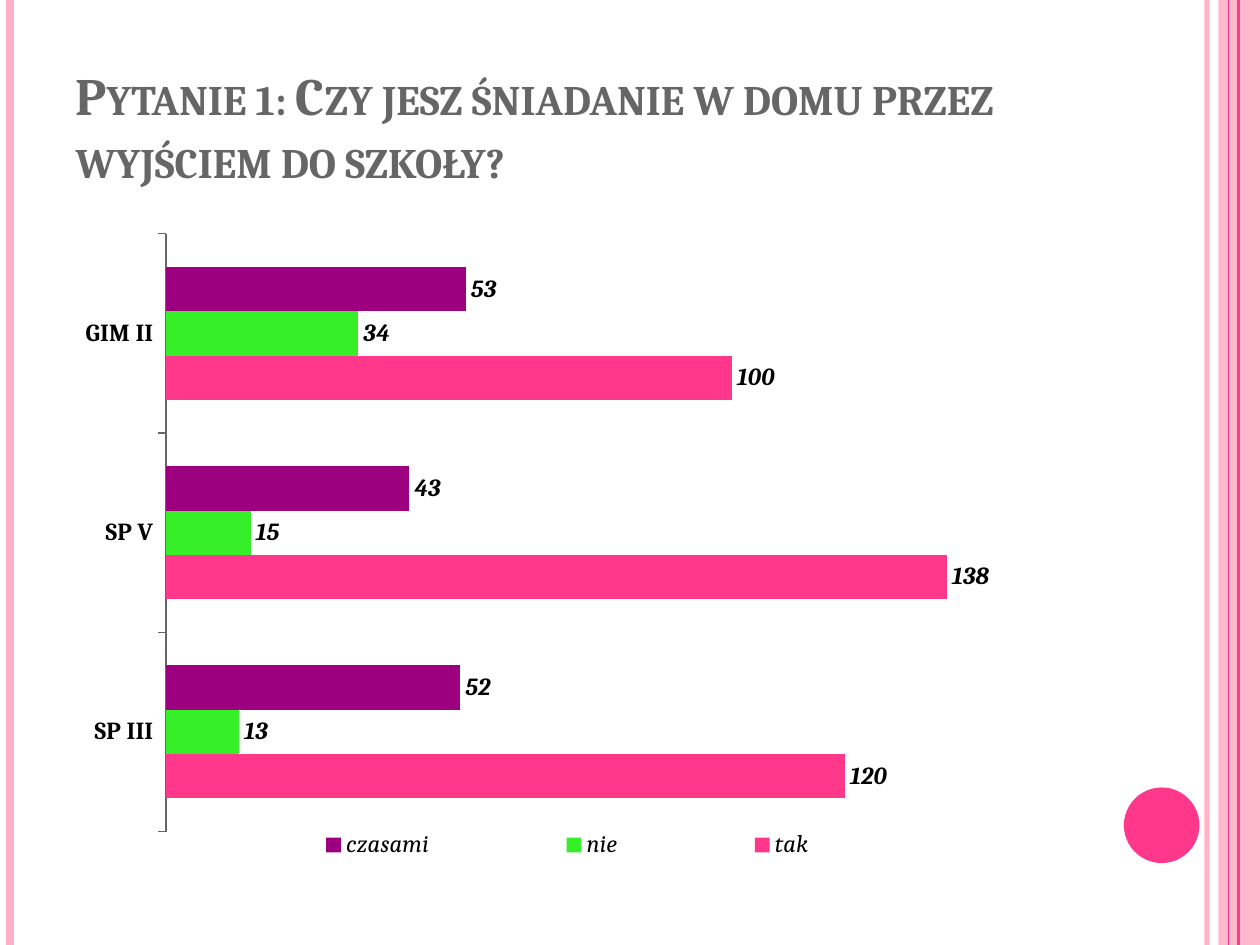
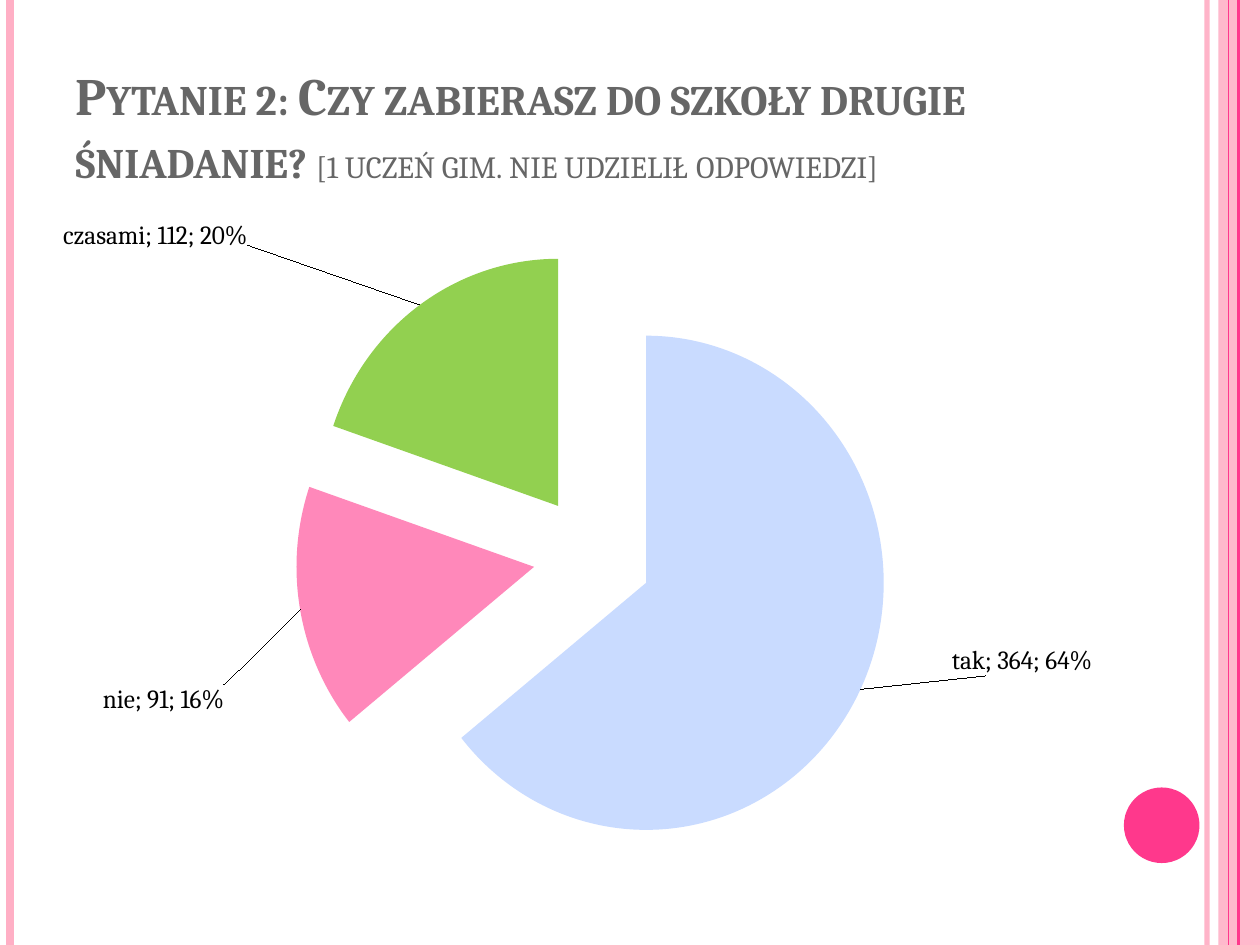
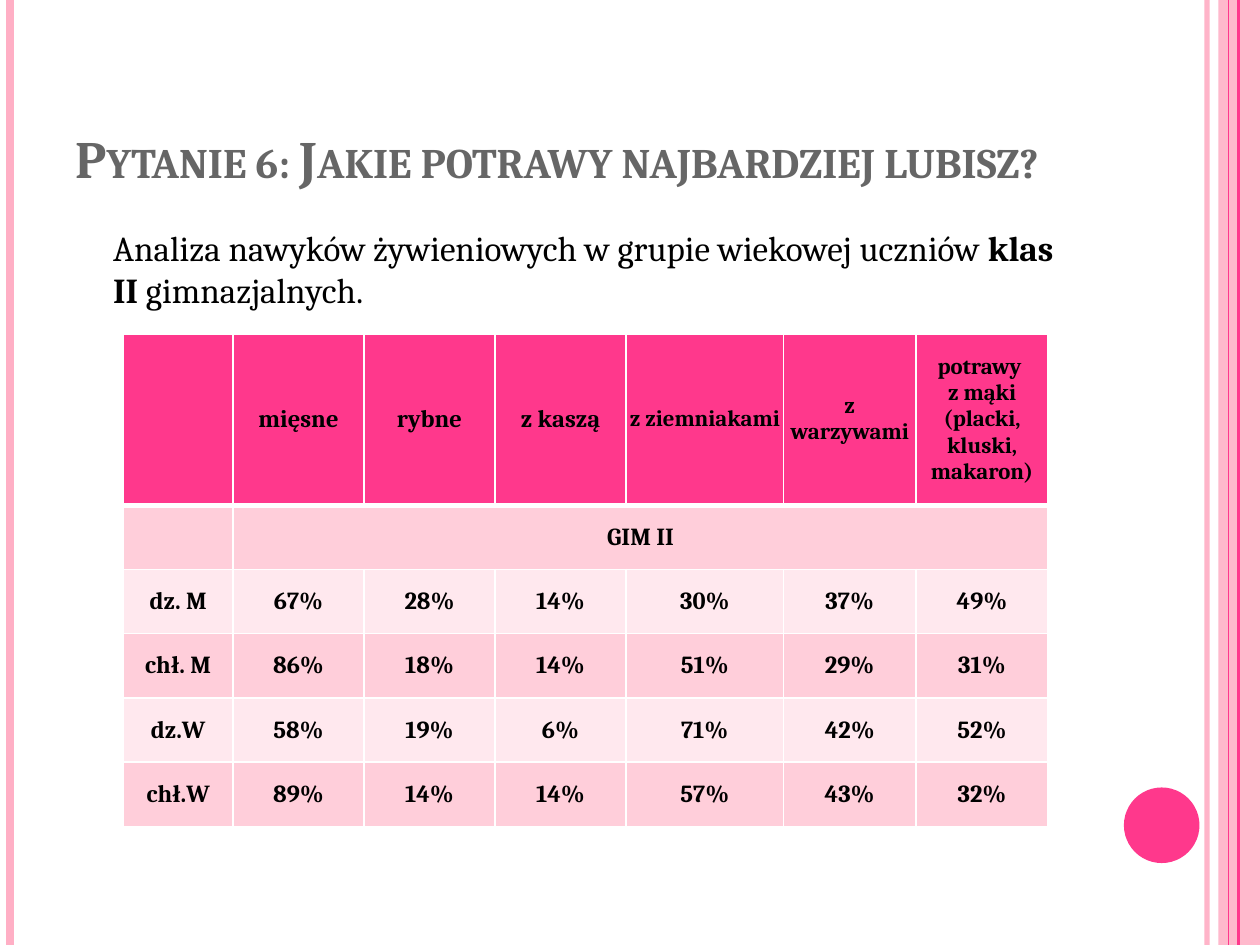
import copy

import lxml.etree
import pptx
import pptx.chart.data
import pptx.dml.color
import pptx.enum.chart
import pptx.enum.shapes
import pptx.enum.text
import pptx.oxml
import pptx.oxml.ns
import pptx.util

Inches = pptx.util.Inches
Pt = pptx.util.Pt
RGB = pptx.dml.color.RGBColor.from_string
qn = pptx.oxml.ns.qn

FACE = "Cambria"
COLORS = {
    "text": "000000", "title": "666666", "white": "FFFFFF",
    "pink": "FF388C", "light_pink": "FFAFC5",
    "green": "37EF29", "purple": "9C007F",
    "pie_blue": "C9DBFF", "pie_pink": "FF88BA", "pie_green": "92D050",
    "row_dark": "FFCEDA", "row_light": "FFE8EE",
}
CONTENT = (Inches(0.5), Inches(1.75), Inches(8.17), Inches(5.33))


def style_font(font, size, bold=False, italic=False, color="text", face=FACE):
    font.name = face
    font.size = Pt(size)
    font.bold = bold
    font.italic = italic
    font.color.rgb = RGB(COLORS[color])


def set_layout(parent, index, inner=False, **values):
    for old in parent.findall(qn("c:layout")):
        parent.remove(old)
    layout = lxml.etree.Element(qn("c:layout"))
    manual = lxml.etree.SubElement(layout, qn("c:manualLayout"))
    if inner:
        lxml.etree.SubElement(manual, qn("c:layoutTarget")).set("val", "inner")
    if "w" in values:
        for mode in ("c:xMode", "c:yMode"):
            lxml.etree.SubElement(manual, qn(mode)).set("val", "edge")
    for key, value in values.items():
        lxml.etree.SubElement(manual, qn(f"c:{key}")).set("val", str(value))
    parent.insert(index, layout)


prs = pptx.Presentation()
prs.slide_width = Inches(10)
prs.slide_height = Inches(7.5)

titles = [
    [("Pytanie 1: Czy jesz śniadanie w domu przez wyjściem do szkoły?", 30, True)],
    [("Pytanie 2: Czy zabierasz do szkoły drugie śniadanie? ", 30, True),
     ("[1 uczeń gim. nie udzielił odpowiedzi]", 22, False)],
    [("Pytanie 6: Jakie potrawy najbardziej lubisz?", 30, True)],
]
stripes = [(9.58, "light_pink", 3), (0.08, "light_pink", 4.5),
           (9.83, "pink", 1.5), (9.75, "pink", 0.75)]

for title_parts in titles:
    slide = prs.slides.add_slide(prs.slide_layouts[5])
    band = slide.shapes.add_shape(
        pptx.enum.shapes.MSO_SHAPE.RECTANGLE, Inches(9.67), 0, Inches(0.33), Inches(7.5))
    dot = slide.shapes.add_shape(
        pptx.enum.shapes.MSO_SHAPE.OVAL, Inches(8.92), Inches(6.25), Inches(0.6), Inches(0.6))
    for part, color in ((band, "light_pink"), (dot, "pink")):
        part.shadow.inherit = False
        part.fill.solid()
        part.fill.fore_color.rgb = RGB(COLORS[color])
        part.line.fill.background()

    translucent = [(band, 87000)]
    for x, color, width in stripes:
        stripe = slide.shapes.add_connector(
            pptx.enum.shapes.MSO_CONNECTOR.STRAIGHT, Inches(x), 0, Inches(x), Inches(7.5))
        stripe.line.color.rgb = RGB(COLORS[color])
        stripe.line.width = Pt(width)
        lxml.etree.SubElement(stripe._element.spPr, qn("a:effectLst"))
        if width == 3:
            translucent.append((stripe, 93000))
    for part, opacity in translucent:
        tint = next(part._element.spPr.iter(qn("a:srgbClr")))
        lxml.etree.SubElement(tint, qn("a:alpha")).set("val", str(opacity))

    title = slide.shapes.title
    title.left, title.top = Inches(0.5), Inches(0.3)
    title.width, title.height = Inches(8.17), Inches(1.25)
    frame = title.text_frame
    frame.auto_size = pptx.enum.text.MSO_AUTO_SIZE.NONE
    frame.vertical_anchor = pptx.enum.text.MSO_ANCHOR.BOTTOM
    paragraph = frame.paragraphs[0]
    paragraph.alignment = pptx.enum.text.PP_ALIGN.LEFT
    for text, size, bold in title_parts:
        run = paragraph.add_run()
        run.text = text
        style_font(run.font, size, bold, color="title")
        run._r.get_or_add_rPr().set("cap", "small")

breakfast_slide, lunch_slide, dishes_slide = prs.slides

answers = pptx.chart.data.CategoryChartData()
answers.categories = ["SP III", "SP V", "GIM II"]
answers.add_series("tak", (120, 138, 100))
answers.add_series("nie", (13, 15, 34))
answers.add_series("czasami", (52, 43, 53))
breakfast = breakfast_slide.shapes.add_chart(
    pptx.enum.chart.XL_CHART_TYPE.BAR_CLUSTERED, *CONTENT, answers).chart
style_font(breakfast.font, 10, face="TeX Gyre Schola")
breakfast.has_title = False
breakfast.has_legend = True
breakfast.legend.position = pptx.enum.chart.XL_LEGEND_POSITION.BOTTOM
breakfast.legend.include_in_layout = False
style_font(breakfast.legend.font, 14, italic=True)
set_layout(breakfast.legend._element, 1, x=0.13, y=0.9, w=0.72, h=0.06)
set_layout(breakfast._chartSpace.chart.plotArea, 0, inner=True, x=0.1, y=0.02, w=0.88, h=0.89)

schools = breakfast.category_axis
schools.major_tick_mark = pptx.enum.chart.XL_TICK_MARK.OUTSIDE
schools.format.line.color.rgb = RGB(COLORS["title"])
style_font(schools.tick_labels.font, 14, bold=True)
counts = breakfast.value_axis
counts.visible = False
counts.has_major_gridlines = False
counts.minimum_scale = 0
counts.maximum_scale = 160

bars = breakfast.plots[0]
bars.gap_width = 150
bars.overlap = 0
bars.vary_by_categories = False
for series, color in zip(bars.series, ("pink", "green", "purple")):
    series.format.fill.solid()
    series.format.fill.fore_color.rgb = RGB(COLORS[color])
    labels = series.data_labels
    labels.show_value = True
    labels.position = pptx.enum.chart.XL_LABEL_POSITION.OUTSIDE_END
    style_font(labels.font, 14, bold=True, italic=True)

totals = pptx.chart.data.CategoryChartData()
totals.categories = ["tak", "nie", "czasami"]
totals.add_series("Series 1", (364, 91, 112))
lunch = lunch_slide.shapes.add_chart(
    pptx.enum.chart.XL_CHART_TYPE.PIE, *CONTENT, totals).chart
style_font(lunch.font, 10, face="TeX Gyre Schola")
lunch.has_title = False
lunch.has_legend = False
set_layout(lunch._chartSpace.chart.plotArea, 0, inner=True, x=0.02, y=0.04, w=0.95, h=0.92)
lunch.plots[0].vary_by_categories = True

pie = lunch.plots[0].series[0]
for index, color in enumerate(("pie_blue", "pie_pink", "pie_green")):
    slice_fill = pie.points[index].format.fill
    slice_fill.solid()
    slice_fill.fore_color.rgb = RGB(COLORS[color])
explosion = lxml.etree.Element(qn("c:explosion"))
explosion.set("val", "25")
pie._element.find(qn("c:dPt")).addprevious(explosion)

labels = pie.data_labels
labels.show_category_name = True
labels.show_value = True
labels.show_percentage = True
labels.position = pptx.enum.chart.XL_LABEL_POSITION.OUTSIDE_END
style_font(labels.font, 15)
label_set = labels._element
separator = lxml.etree.Element(qn("c:separator"))
separator.text = "; "
label_set.find(qn("c:showBubbleSize")).addnext(separator)
shared_settings = [child for child in label_set if child.tag != qn("c:showLeaderLines")]
for index, (dx, dy) in enumerate(((0.12, -0.07), (-0.07, 0.11), (-0.17, -0.08))):
    label = lxml.etree.Element(qn("c:dLbl"))
    lxml.etree.SubElement(label, qn("c:idx")).set("val", str(index))
    set_layout(label, 1, x=dx, y=dy)
    for setting in shared_settings:
        label.append(copy.deepcopy(setting))
    label_set.insert(index, label)
for old in label_set.findall(qn("c:showLeaderLines")):
    label_set.remove(old)
leader_lines = lxml.etree.Element(qn("c:showLeaderLines"))
leader_lines.set("val", "1")
separator.addnext(leader_lines)

intro = dishes_slide.shapes.add_textbox(*CONTENT).text_frame
intro.word_wrap = True
paragraph = intro.paragraphs[0]
paragraph.space_before = Pt(6)
paragraph._p.get_or_add_pPr().set("marL", str(Inches(0.3)))
for text, bold in (("Analiza nawyków żywieniowych w grupie wiekowej uczniów ", False),
                   ("klas II ", True), ("gimnazjalnych.", False)):
    run = paragraph.add_run()
    run.text = text
    style_font(run.font, 20, bold)

rows = [
    ["", "mięsne", "rybne", "z kaszą", "z ziemniakami", "z warzywami",
     "potrawy \vz mąki\v(placki, kluski, makaron)"],
    ["", "GIM II", "", "", "", "", ""],
    ["dz. M", "67%", "28%", "14%", "30%", "37%", "49%"],
    ["chł. M", "86%", "18%", "14%", "51%", "29%", "31%"],
    ["dz.W", "58%", "19%", "6%", "71%", "42%", "52%"],
    ["chł.W", "89%", "14%", "14%", "57%", "43%", "32%"],
]
dishes = dishes_slide.shapes.add_table(
    len(rows), len(rows[0]), Inches(0.98), Inches(2.65), Inches(7.32), Inches(3.9)).table
for column, width in zip(dishes.columns, (0.87, 1.04, 1.04, 1.04, 1.25, 1.05, 1.05)):
    column.width = Inches(width)
for r, values in enumerate(rows):
    dishes.rows[r].height = Inches(0.51 if r else 1.36)
    row_color = ("row_dark" if r % 2 else "row_light") if r else "pink"
    for c, value in enumerate(values):
        cell = dishes.cell(r, c)
        cell.fill.solid()
        cell.fill.fore_color.rgb = RGB(COLORS[row_color])
        cell.vertical_anchor = pptx.enum.text.MSO_ANCHOR.MIDDLE
        cell.margin_left = cell.margin_right = cell.margin_top = cell.margin_bottom = 0
        for position, side in enumerate(("lnL", "lnR", "lnT", "lnB")):
            thick = (r == 0 and side == "lnB") or (r == 1 and side == "lnT")
            border = lxml.etree.Element(qn(f"a:{side}"))
            border.set("w", str(Pt(3 if thick else 1)))
            border_fill = lxml.etree.SubElement(border, qn("a:solidFill"))
            lxml.etree.SubElement(border_fill, qn("a:srgbClr")).set("val", COLORS["white"])
            cell._tc.get_or_add_tcPr().insert(position, border)
        if value:
            paragraph = cell.text_frame.paragraphs[0]
            paragraph.text = value
            paragraph.alignment = pptx.enum.text.PP_ALIGN.CENTER
            for run in paragraph.runs:
                style_font(run.font, 13 if r == 0 and c > 3 else 14, bold=True)
dishes.cell(1, 1).merge(dishes.cell(1, 6))

prs.save("out.pptx")
